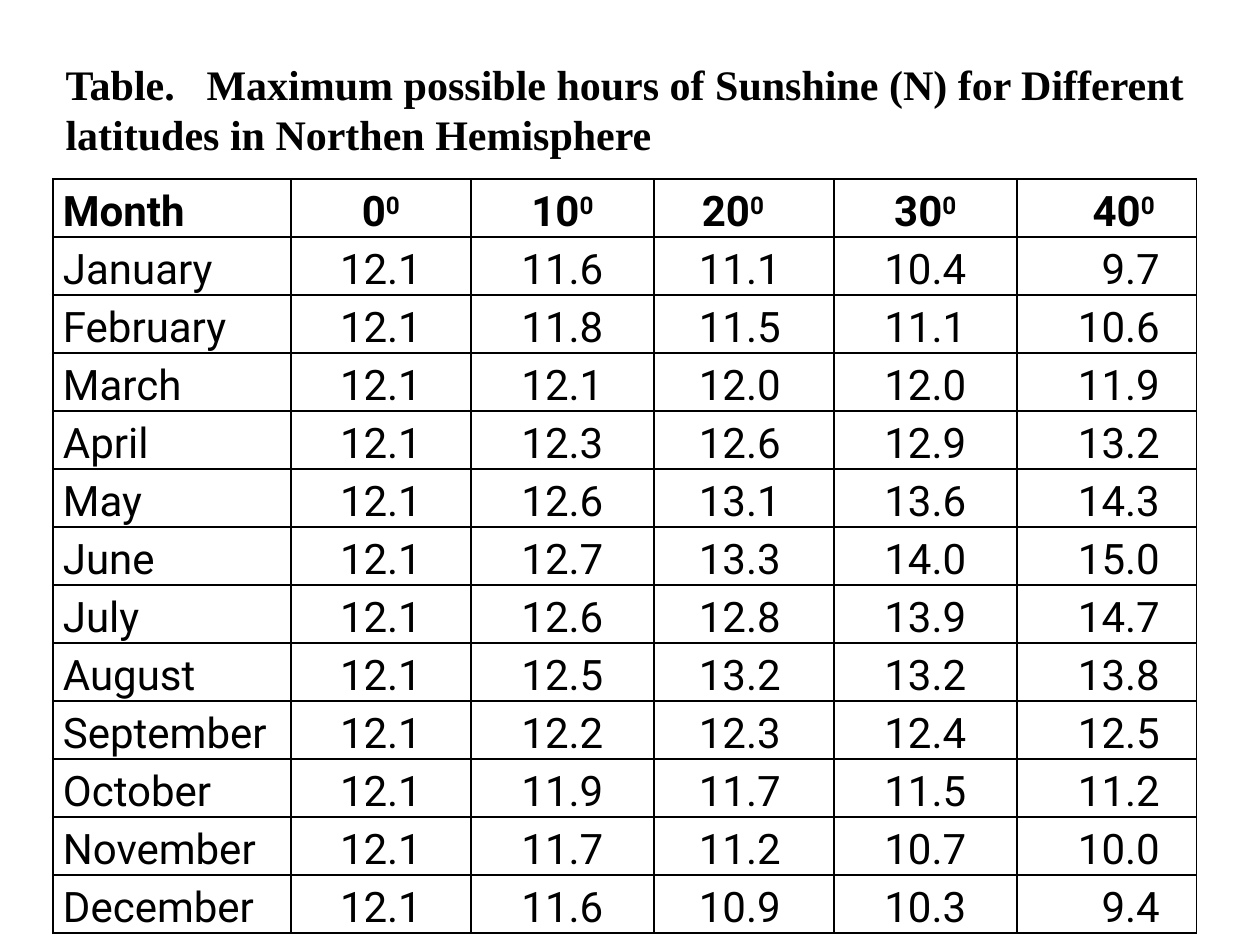
from lxml.etree import SubElement
from pptx import Presentation
from pptx.dml.color import RGBColor
from pptx.enum.text import MSO_ANCHOR, MSO_AUTO_SIZE, PP_ALIGN
from pptx.oxml.ns import qn
from pptx.util import Pt

PX = 914400 // 126
BLACK = RGBColor(0x00, 0x00, 0x00)

COLUMN_WIDTHS = [238, 180, 183, 180, 183, 180]
ROW_HEIGHT = 58
LEFT, CENTER, RIGHT = PP_ALIGN.LEFT, PP_ALIGN.CENTER, PP_ALIGN.RIGHT
ALIGNMENTS = [LEFT, CENTER, CENTER, LEFT, CENTER, RIGHT]
# Left and right cell margins, for the header and for the months
HEADER_MARGINS = [(10, 0), (0, 0), (0, 0), (48, 0), (0, 0), (0, 42)]
BODY_MARGINS = [(10, 0), (0, 0), (0, 0), (45, 0), (0, 0), (0, 37)]

ROWS = [
    ["Month", "0", "10", "20", "30", "40"],
    ["January", "12.1", "11.6", "11.1", "10.4", "9.7"],
    ["February", "12.1", "11.8", "11.5", "11.1", "10.6"],
    ["March", "12.1", "12.1", "12.0", "12.0", "11.9"],
    ["April", "12.1", "12.3", "12.6", "12.9", "13.2"],
    ["May", "12.1", "12.6", "13.1", "13.6", "14.3"],
    ["June", "12.1", "12.7", "13.3", "14.0", "15.0"],
    ["July", "12.1", "12.6", "12.8", "13.9", "14.7"],
    ["August", "12.1", "12.5", "13.2", "13.2", "13.8"],
    ["September", "12.1", "12.2", "12.3", "12.4", "12.5"],
    ["October", "12.1", "11.9", "11.7", "11.5", "11.2"],
    ["November", "12.1", "11.7", "11.2", "10.7", "10.0"],
    ["December", "12.1", "11.6", "10.9", "10.3", "9.4"],
]


def add_run(paragraph, text, font_name, bold):
    run = paragraph.add_run()
    run.text = text
    run.font.name = font_name
    run.font.size = Pt(24)
    run.font.bold = bold
    run.font.color.rgb = BLACK
    return run


def set_borders(cell):
    properties = cell._tc.get_or_add_tcPr()
    for position, side in enumerate(["a:lnL", "a:lnR", "a:lnT", "a:lnB"]):
        line = properties.makeelement(qn(side), {"w": str(Pt(1))})
        fill = SubElement(line, qn("a:solidFill"))
        SubElement(fill, qn("a:srgbClr"), val=str(BLACK))
        properties.insert(position, line)


presentation = Presentation()
presentation.slide_width = 1260 * PX
presentation.slide_height = 945 * PX
slide = presentation.slides.add_slide(presentation.slide_layouts[5])

# Title, with a tab stop after the label
title = slide.shapes.title
title.left, title.top, title.width, title.height = 53 * PX, 52 * PX, 1176 * PX, 152 * PX
title.text_frame.word_wrap = True
title.text_frame.auto_size = MSO_AUTO_SIZE.NONE
title.text_frame.vertical_anchor = MSO_ANCHOR.TOP
paragraph = title.text_frame.paragraphs[0]
paragraph.alignment = LEFT
tabs = SubElement(paragraph._p.get_or_add_pPr(), qn("a:tabLst"))
SubElement(tabs, qn("a:tab"), pos=str(141 * PX), algn="l")
add_run(paragraph, "Table.\t", "Times New Roman", True)
add_run(paragraph, "Maximum possible hours of Sunshine (N) for Different "
        "latitudes in Northen Hemisphere", "Times New Roman", True)

# Table grid
table = slide.shapes.add_table(
    len(ROWS), len(COLUMN_WIDTHS), 53 * PX, 179 * PX,
    sum(COLUMN_WIDTHS) * PX, len(ROWS) * ROW_HEIGHT * PX).table
table.first_row = False
table.horz_banding = False
for column, width in zip(table.columns, COLUMN_WIDTHS):
    column.width = width * PX
for row in table.rows:
    row.height = ROW_HEIGHT * PX

# Table cells
for row_index, values in enumerate(ROWS):
    is_header = row_index == 0
    margins = HEADER_MARGINS if is_header else BODY_MARGINS
    for column_index, value in enumerate(values):
        cell = table.cell(row_index, column_index)
        cell.fill.background()
        set_borders(cell)
        cell.vertical_anchor = MSO_ANCHOR.BOTTOM
        margin_left, margin_right = margins[column_index]
        cell.margin_left, cell.margin_right = margin_left * PX, margin_right * PX
        cell.margin_top = cell.margin_bottom = 0
        paragraph = cell.text_frame.paragraphs[0]
        paragraph.alignment = ALIGNMENTS[column_index]
        paragraph.line_spacing = 1.15
        add_run(paragraph, value, "Roboto", is_header)
        if is_header and column_index > 0:
            degree = add_run(paragraph, "0", "Roboto", True)
            degree.font._rPr.set("baseline", "30000")

presentation.save("out.pptx")
